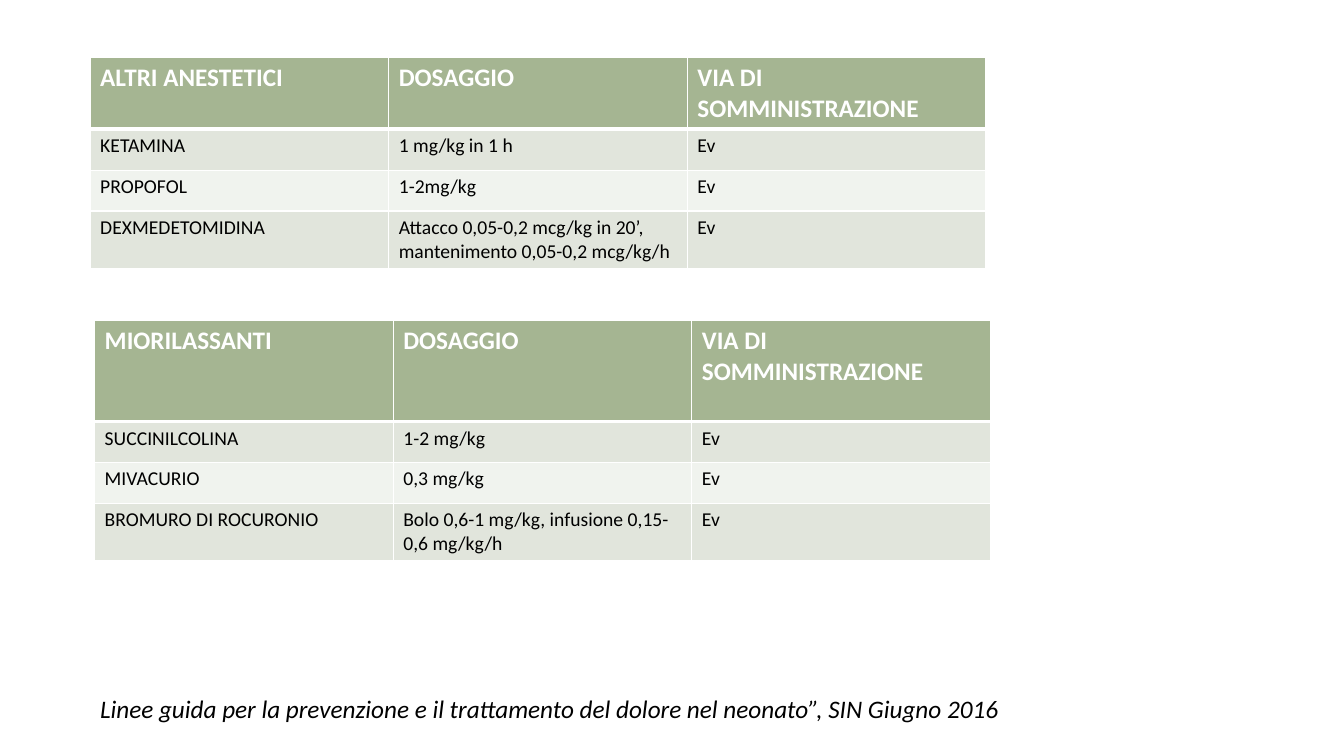
from lxml.etree import SubElement
from pptx import Presentation
from pptx.dml.color import RGBColor
from pptx.oxml.ns import qn
from pptx.util import Pt


def paint(color_format, color):
    color_format.rgb = RGBColor.from_string(color)


def add_borders(cell, top, bottom):
    properties = cell._tc.get_or_add_tcPr()
    for side, width in (("L", 1), ("R", 1), ("T", top), ("B", bottom)):
        line = SubElement(properties, qn(f"a:ln{side}"), w=str(Pt(width)))
        fill = SubElement(line, qn("a:solidFill"))
        SubElement(fill, qn("a:srgbClr"), val="FFFFFF")


deck = Presentation()
deck.slide_width, deck.slide_height = Pt(960), Pt(540)
page = deck.slides.add_slide(deck.slide_layouts[6])

anesthetics = [
    ("ALTRI ANESTETICI", "DOSAGGIO", "VIA DI SOMMINISTRAZIONE"),
    ("KETAMINA", "1 mg/kg in 1 h", "Ev"),
    ("PROPOFOL", "1-2mg/kg", "Ev"),
    ("DEXMEDETOMIDINA", "Attacco 0,05-0,2 mcg/kg in 20’, mantenimento 0,05-0,2 mcg/kg/h", "Ev"),
]
relaxants = [
    ("MIORILASSANTI", "DOSAGGIO", "VIA DI SOMMINISTRAZIONE"),
    ("SUCCINILCOLINA", "1-2 mg/kg", "Ev"),
    ("MIVACURIO", "0,3 mg/kg", "Ev"),
    ("BROMURO DI ROCURONIO", "Bolo 0,6-1 mg/kg, infusione 0,15-0,6 mg/kg/h", "Ev"),
]
row_fills = ["A5B592", "E1E5DC", "F0F3EE", "E1E5DC"]

for drugs, left, top, header_height in (
    (anesthetics, 64.4, 41.2, 50.4),
    (relaxants, 67.6, 229, 72),
):
    heights = [header_height, 29.2, 29.2, 40.8]
    frame = page.shapes.add_table(4, 3, Pt(left), Pt(top), Pt(639.9), Pt(sum(heights)))
    table = frame.table
    for column in table.columns:
        column.width = Pt(213.3)
    for row_index, texts in enumerate(drugs):
        header = row_index == 0
        table.rows[row_index].height = Pt(heights[row_index])
        for column_index, text in enumerate(texts):
            cell = table.cell(row_index, column_index)
            add_borders(cell, 3 if row_index == 1 else 1, 3 if header else 1)
            cell.fill.solid()
            paint(cell.fill.fore_color, row_fills[row_index])
            cell.text = text
            font = cell.text_frame.paragraphs[0].font
            font.name = "Calibri"
            font.size = Pt(18 if header else 14)
            font.bold = header
            paint(font.color, "FFFFFF" if header else "000000")

source_box = page.shapes.add_textbox(Pt(64.4), Pt(492), Pt(720.5), Pt(29))
source_box.text_frame.word_wrap = True
para = source_box.text_frame.paragraphs[0]
para.text = "Linee guida per la prevenzione e il trattamento del dolore nel neonato”, SIN Giugno 2016"
para.font.name = "Calibri"
para.font.size = Pt(18)
para.font.italic = True
paint(para.font.color, "000000")

deck.save("out.pptx")
